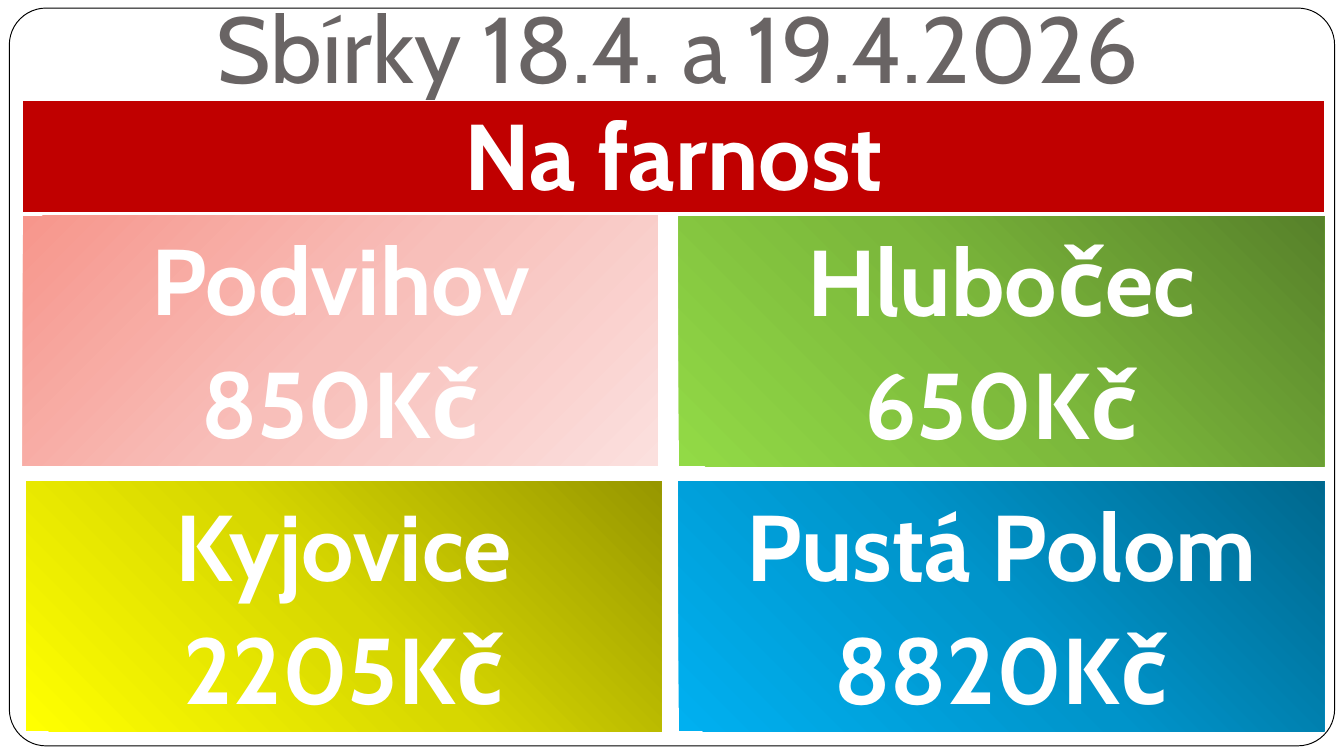
import dataclasses

import pptx
import pptx.dml.color
import pptx.enum.shapes
import pptx.enum.text
import pptx.oxml
import pptx.oxml.ns
import pptx.util

Pt = pptx.util.Pt
Anchor = pptx.enum.text.MSO_ANCHOR
Shape = pptx.enum.shapes.MSO_SHAPE


@dataclasses.dataclass(frozen=True)
class Theme:
    """Colours, font and type sizes of the slide."""
    font: str = "Cabin"
    size: float = 50
    gap: float = 5.8
    title: str = "696464"
    white: str = "FFFFFF"
    black: str = "000000"
    banner: str = "C00000"
    pink: tuple = ("F7968C", "F8BFBA", "FBE0DE")
    green: tuple = ("57812A", "7BB73B", "92DA46")
    yellow: tuple = ("979700", "D7D700", "FFFF00")
    blue: tuple = ("00688E", "0094CA", "00B0F0")


THEME = Theme()
LINEAR = '<a:lin ang="2700000" scaled="0"/>'
FROM_TOP_RIGHT = '<a:path path="circle"><a:fillToRect l="100000" b="100000"/></a:path>'


def rgb(value):
    """Return a colour object for a hex string."""
    return pptx.dml.color.RGBColor.from_string(value)


def write_text(shape, *lines, color=THEME.white, bold=True, anchor=Anchor.MIDDLE, bottom=7.2):
    """Fill a shape with centred lines in the theme font."""
    frame = shape.text_frame
    frame.word_wrap = True
    frame.vertical_anchor = anchor
    frame.margin_left = frame.margin_right = Pt(7.2)
    frame.margin_top, frame.margin_bottom = Pt(3.6), Pt(bottom)
    for index, line in enumerate(lines):
        paragraph = frame.add_paragraph() if index else frame.paragraphs[0]
        paragraph.alignment = pptx.enum.text.PP_ALIGN.CENTER
        paragraph.space_before = Pt(THEME.gap if index else 0)
        run = paragraph.add_run()
        run.text = line
        run.font.name, run.font.size, run.font.bold = THEME.font, Pt(THEME.size), bold
        run.font.color.rgb = rgb(color)


def add_block(slide, box, kind=Shape.RECTANGLE, fill=None, line=None, width=0.75):
    """Add a shadowless shape with an optional solid fill and line."""
    shape = slide.shapes.add_shape(kind, *map(Pt, box))
    shape.shadow.inherit = False
    if fill:
        shape.fill.solid()
        shape.fill.fore_color.rgb = rgb(fill)
    if line:
        shape.line.color.rgb = rgb(line)
        shape.line.width = Pt(width)
    else:
        shape.line.fill.background()
    return shape


def set_gradient(shape, colors, direction):
    """Give a shape a three-stop gradient in the given direction."""
    shape.fill.gradient()
    stops = "".join(
        f'<a:gs pos="{index * 50000}"><a:srgbClr val="{color}"/></a:gs>'
        for index, color in enumerate(colors))
    gradient = pptx.oxml.parse_xml(
        f'<a:gradFill {pptx.oxml.ns.nsdecls("a")} rotWithShape="1">'
        f'<a:gsLst>{stops}</a:gsLst>{direction}</a:gradFill>')
    properties = shape.element.spPr
    properties.replace(properties.find(pptx.oxml.ns.qn("a:gradFill")), gradient)


def add_frame(slide, box):
    """Add the rounded outline around the slide."""
    frame = add_block(slide, box, Shape.ROUNDED_RECTANGLE, THEME.white, THEME.black, 0.5)
    frame.adjustments[0] = 0.05


def add_title(slide, box, text):
    """Add the heading with the dates of the collections."""
    title = slide.shapes.add_textbox(*map(Pt, box))
    write_text(title, text, color=THEME.title, bold=False, anchor=Anchor.BOTTOM)


def add_banner(slide, box, text):
    """Add the red band naming the purpose."""
    banner = add_block(slide, box, fill=THEME.banner, line=THEME.white)
    write_text(banner, text)


def add_parish(slide, box, name, amount, colors, direction=FROM_TOP_RIGHT):
    """Add one parish tile with its collected amount."""
    tile = add_block(slide, box)
    set_gradient(tile, colors, direction)
    write_text(tile, name, amount, anchor=Anchor.TOP, bottom=3.6)


def main():
    """Build the slide and save it."""
    presentation = pptx.Presentation()
    presentation.slide_width, presentation.slide_height = Pt(720), Pt(405)
    slide = presentation.slides.add_slide(presentation.slide_layouts[6])
    add_frame(slide, (5, 4.3, 710, 395.3))
    add_title(slide, (14.4, 0, 697.7, 62), "Sbírky 18.4. a 19.4.2026")
    height = 134
    right, right_width = 363.6, 345.8
    lower = 257.8
    add_parish(slide, (12.3, 115.5, 340.2, height), "Podvihov", "850Kč", THEME.pink, LINEAR)
    add_parish(slide, (right, 115.9, right_width, height), "Hlubočec", "650Kč", THEME.green)
    add_parish(slide, (14.1, lower, 340.2, height), "Kyjovice", "2205Kč", THEME.yellow)
    add_parish(slide, (right, lower, right_width, height), "Pustá Polom", "8820Kč", THEME.blue)
    add_banner(slide, (12.2, 54, 697.7, 59.8), "Na farnost")
    presentation.save("out.pptx")


if __name__ == "__main__":
    main()
